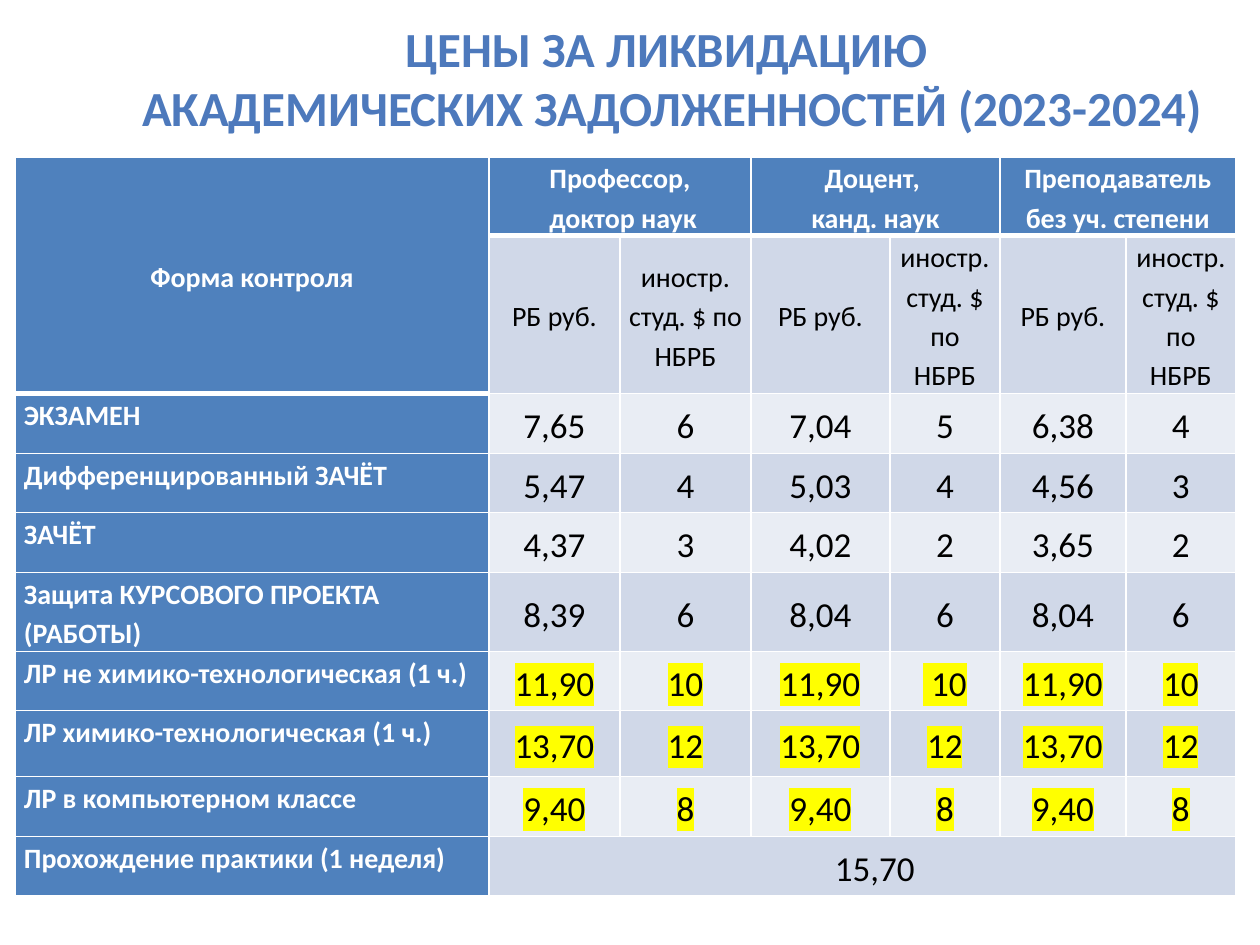
from lxml import etree
from pptx import Presentation
from pptx import util as u
from pptx.dml.color import RGBColor
from pptx.enum import text
from pptx.oxml.ns import qn

EMU_PER_PX = 914400 / 126
COLORS = {
    "title": "4D79BC", "head": "4F81BD", "dark_band": "D0D8E8",
    "light_band": "E9EDF4", "white": "FFFFFF", "black": "000000",
    "mark": "FFFF00",
}
HEAD = dict(size=16, bold=True, color="white")
UNIT = dict(size=16, bold=False, color="black")
PRICE = dict(size=20, bold=False, color="black")

COLUMN_WIDTHS = [474, 131, 131, 139, 110, 126, 110]
ROW_HEIGHTS = [78, 158, 60, 59, 60, 79, 59, 66, 60, 59]
POSTS = ["Профессор,\n доктор наук", "Доцент, \nканд. наук",
         "Преподаватель без уч. степени"]
UNITS = ["РБ руб.", "иностр. студ. $ по НБРБ"]
PRICES = [
    ["ЭКЗАМЕН", "7,65", "6", "7,04", "5", "6,38", "4"],
    ["Дифференцированный ЗАЧЁТ", "5,47", "4", "5,03", "4", "4,56", "3"],
    ["ЗАЧЁТ", "4,37", "3", "4,02", "2", "3,65", "2"],
    ["Защита КУРСОВОГО ПРОЕКТА (РАБОТЫ)", "8,39", "6", "8,04", "6", "8,04", "6"],
    ["ЛР не химико-технологическая (1 ч.)", "11,90", "10", "11,90", " 10", "11,90", "10"],
    ["ЛР химико-технологическая (1 ч.)", "13,70", "12", "13,70", "12", "13,70", "12"],
    ["ЛР в компьютерном классе", "9,40", "8", "9,40", "8", "9,40", "8"],
    ["Прохождение практики (1 неделя)", "15,70", "", "", "", "", ""],
]
MARKED_LABELS = [row[0] for row in PRICES[4:7]]


def px(length):
    return u.Emu(round(length * EMU_PER_PX))


def write(frame, words, size, bold, color, align, spacing, marked=False):
    """Put one paragraph per line of words into the frame, all formatted alike."""
    frame.text = words
    for paragraph in frame.paragraphs:
        paragraph.alignment = align
        paragraph.line_spacing = spacing
        for run in paragraph.runs:
            for key, value in dict(size=u.Pt(size), bold=bold, name="Calibri").items():
                setattr(run.font, key, value)
            run.font.color.rgb = RGBColor.from_string(COLORS[color])
            if marked:
                highlight = etree.Element(qn("a:highlight"))
                etree.SubElement(highlight, qn("a:srgbClr"), val=COLORS["mark"])
                run.font.fill  # highlight follows the fill and precedes the typeface
                run._r.rPr.find(qn("a:latin")).addprevious(highlight)


prs = Presentation()
prs.slide_width, prs.slide_height = px(1260), px(945)
slide = prs.slides.add_slide(prs.slide_layouts[5])

title = slide.shapes.title
title.left, title.top, title.width, title.height = px(88), px(34), px(1168), px(86)
write(title.text_frame, "ЦЕНЫ ЗА ЛИКВИДАЦИЮ \nАКАДЕМИЧЕСКИХ ЗАДОЛЖЕННОСТЕЙ (2023-2024)",
      28, True, "title", text.PP_ALIGN.CENTER, 1.0)
title.text_frame.auto_size = text.MSO_AUTO_SIZE.NONE
title.text_frame.vertical_anchor = text.MSO_ANCHOR.MIDDLE

posts_row = ["Форма контроля"]
for post in POSTS:
    posts_row += [post, ""]
rows = [posts_row, [""] + UNITS * len(POSTS)] + PRICES

table = slide.shapes.add_table(
    len(rows), len(COLUMN_WIDTHS), px(15), px(157),
    px(sum(COLUMN_WIDTHS)), px(sum(ROW_HEIGHTS))).table
for column, width in zip(table.columns, COLUMN_WIDTHS):
    column.width = px(width)
for row, height in zip(table.rows, ROW_HEIGHTS):
    row.height = px(height)

for r, row in enumerate(rows):
    for c, words in enumerate(row):
        cell = table.cell(r, c)
        is_head = r == 0 or c == 0
        is_label = c == 0 and r > 1
        for key, value in dict(margin_left=px(9), margin_right=px(9),
                               margin_top=0, margin_bottom=0).items():
            setattr(cell, key, value)
        if not is_label and (r > 0 or c == 0):
            cell.vertical_anchor = text.MSO_ANCHOR.MIDDLE

        for side in ("lnL", "lnR", "lnT", "lnB"):
            thick = side == "lnB" and (r == 0 or (r == 1 and c == 0))
            line = etree.SubElement(cell._tc.get_or_add_tcPr(), qn(f"a:{side}"),
                                    w=str(u.Pt(3 if thick else 1)))
            paint = etree.SubElement(line, qn("a:solidFill"))
            etree.SubElement(paint, qn("a:srgbClr"), val=COLORS["white"])

        band = "head" if is_head else "dark_band" if r % 2 else "light_band"
        cell.fill.solid()
        cell.fill.fore_color.rgb = RGBColor.from_string(COLORS[band])

        if words:
            look = HEAD if is_head else UNIT if r == 1 else PRICE
            align = text.PP_ALIGN.LEFT if is_label else text.PP_ALIGN.CENTER
            write(cell.text_frame, words, **look, align=align, spacing=1.15,
                  marked=c > 0 and row[0] in MARKED_LABELS)

table.cell(0, 0).merge(table.cell(1, 0))
for c in (1, 3, 5):
    table.cell(0, c).merge(table.cell(0, c + 1))
practice_price = table.cell(len(rows) - 1, 1)
practice_price.merge(table.cell(len(rows) - 1, 6))
practice_price.text_frame.paragraphs[0]._p.get_or_add_pPr().set("indent", str(px(25)))

prs.save("out.pptx")
